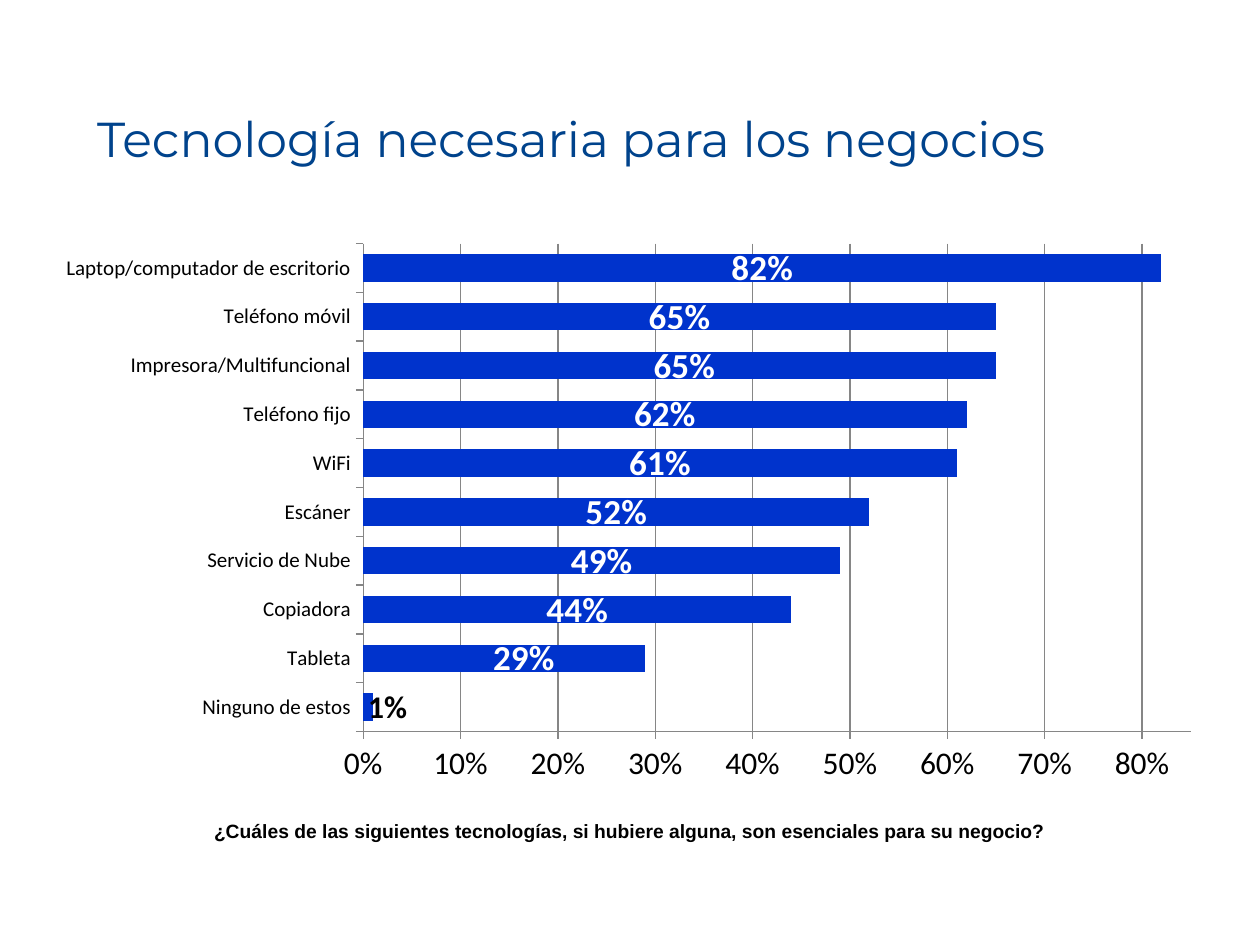
from lxml import etree
from pptx import Presentation
from pptx.chart.data import CategoryChartData
from pptx.dml.color import RGBColor
from pptx.enum.chart import XL_CHART_TYPE, XL_LABEL_POSITION, XL_TICK_MARK
from pptx.enum.text import MSO_ANCHOR, PP_ALIGN
from pptx.oxml.ns import qn
from pptx.util import Inches, Pt

TITLE = "Tecnología necesaria para los negocios"
QUESTION = ("¿Cuáles de las siguientes tecnologías, si hubiere alguna, "
            "son esenciales para su negocio?")
TECHNOLOGIES = [
    ("Ninguno de estos", 0.01),
    ("Tableta", 0.29),
    ("Copiadora", 0.44),
    ("Servicio de Nube", 0.49),
    ("Escáner", 0.52),
    ("WiFi", 0.61),
    ("Teléfono fijo", 0.62),
    ("Impresora/Multifuncional", 0.65),
    ("Teléfono móvil", 0.65),
    ("Laptop/computador de escritorio", 0.82),
]
BLACK, WHITE, BAR_BLUE, TITLE_BLUE, GRAY = "000000", "FFFFFF", "0033CC", "00438C", "868686"
BAR_LABEL = dict(name="Calibri", size=Pt(20), bold=True)
# Bar index: (shift to the right as a share of the chart, size, colour)
SHIFTED_LABELS = {0: (0.016, 18, BLACK), 1: (0.016, 20, WHITE), 7: (0.004, 20, WHITE)}
PLOT_AREA = dict(layoutTarget="inner", xMode="edge", yMode="edge",
                 x=0.286, y=0.018, w=0.675, h=0.833)


def rgb(color):
    return RGBColor.from_string(color)


def style_font(font, color, **values):
    for attribute, value in values.items():
        setattr(font, attribute, value)
    font.color.rgb = rgb(color)


def set_layout(parent, position, values):
    """Give a chart part a manual layout as its child at the given position."""
    for old in parent.findall(qn("c:layout")):
        parent.remove(old)
    layout = etree.Element(qn("c:layout"))
    manual = etree.SubElement(layout, qn("c:manualLayout"))
    for tag, value in values.items():
        etree.SubElement(manual, qn(f"c:{tag}")).set("val", str(value))
    parent.insert(position, layout)


def style_line(line):
    line.color.rgb = rgb(GRAY)
    line.width = Pt(0.75)


def add_title(slide):
    title = slide.shapes.title
    title.left, title.top, title.width, title.height = map(Inches, (0.67, 0.47, 9, 1.25))
    title.text_frame.vertical_anchor = MSO_ANCHOR.MIDDLE
    paragraph = title.text_frame.paragraphs[0]
    paragraph.text = TITLE
    paragraph.alignment = PP_ALIGN.LEFT
    style_font(paragraph.runs[0].font, TITLE_BLUE, name="Montserrat", size=Pt(28))


def add_bars(slide):
    data = CategoryChartData(number_format="0%")
    data.categories = [name for name, _ in TECHNOLOGIES]
    data.add_series("Series 1", [share for _, share in TECHNOLOGIES])
    chart = slide.shapes.add_chart(
        XL_CHART_TYPE.BAR_STACKED, *map(Inches, (0.1, 1.85, 9.73, 4.65)), data).chart
    chart.has_legend = chart.has_title = False
    style_font(chart.font, BLACK, name="Calibri", size=Pt(18))
    set_layout(chart.plots[0]._element.getparent(), 0, PLOT_AREA)

    for axis, size in ((chart.category_axis, 12), (chart.value_axis, 18)):
        axis.major_tick_mark = XL_TICK_MARK.OUTSIDE
        axis.minor_tick_mark = XL_TICK_MARK.NONE
        style_font(axis.tick_labels.font, BLACK, name="Calibri", size=Pt(size))
        style_line(axis.format.line)
    chart.category_axis.has_major_gridlines = False
    shares = chart.value_axis
    shares.minimum_scale, shares.maximum_scale, shares.major_unit = 0, 0.85, 0.1
    shares.has_major_gridlines = True
    style_line(shares.major_gridlines.format.line)
    shares.tick_labels.number_format = "0%"
    shares.tick_labels.number_format_is_linked = False

    plot = chart.plots[0]
    plot.gap_width, plot.overlap, plot.vary_by_categories = 78, 100, False
    bars = plot.series[0]
    bars.format.fill.solid()
    bars.format.fill.fore_color.rgb = rgb(BAR_BLUE)
    labels = bars.data_labels
    labels.show_value = True
    labels.number_format, labels.number_format_is_linked = "0%", False
    labels.position = XL_LABEL_POSITION.CENTER
    style_font(labels.font, WHITE, **BAR_LABEL)
    for index, (shift, size, color) in SHIFTED_LABELS.items():
        label = bars.points[index].data_label
        label.position = XL_LABEL_POSITION.CENTER
        style_font(label.font, color, **{**BAR_LABEL, "size": Pt(size)})
        element = bars._element.xpath(f".//c:dLbl[c:idx/@val='{index}']")[0]
        set_layout(element, 1, dict(x=shift, y=0))


def add_question(slide):
    frame = slide.shapes.add_textbox(*map(Inches, (0.54, 6.45, 8.92, 0.29))).text_frame
    frame.word_wrap = True
    paragraph = frame.paragraphs[0]
    paragraph.text = QUESTION
    paragraph.alignment = PP_ALIGN.CENTER
    style_font(paragraph.runs[0].font, BLACK, name="Arial", size=Pt(11), bold=True)


def main():
    deck = Presentation()
    deck.slide_width, deck.slide_height = Inches(10), Inches(7.5)
    slide = deck.slides.add_slide(deck.slide_layouts.get_by_name("Title Only"))
    add_bars(slide)
    add_title(slide)
    add_question(slide)
    deck.save("out.pptx")


if __name__ == "__main__":
    main()
